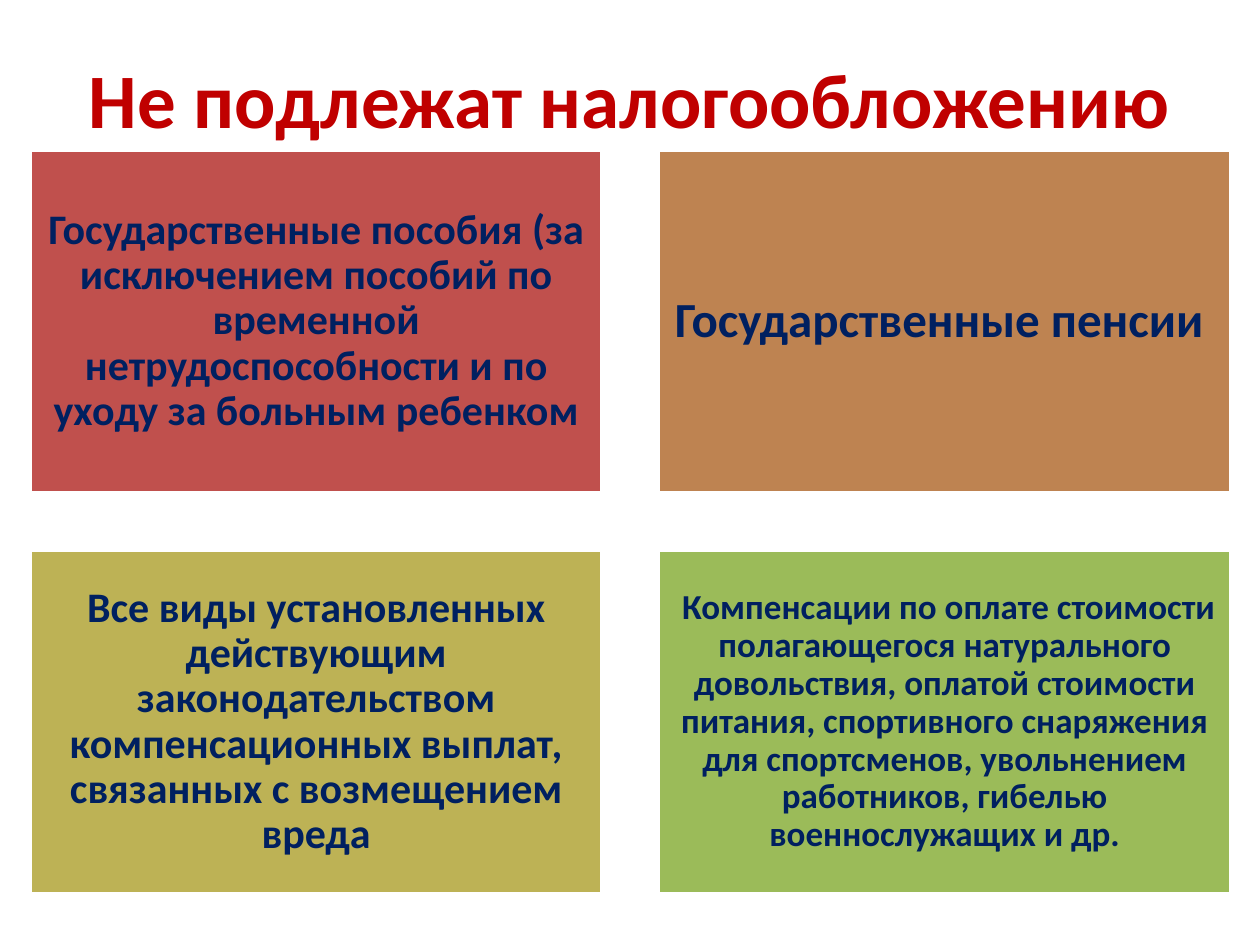
import pptx
import pptx.dml.color
import pptx.enum.shapes
import pptx.enum.text
import pptx.util
from pptx.util import Cm

TITLE = "Не подлежат налогообложению"
# Text, fill colour and font size of each card, row by row
CARDS = [
    ("Государственные пособия (за исключением пособий по временной "
     "нетрудоспособности и по уходу за больным ребенком", "C0504D", 24),
    ("Государственные пенсии ", "BE8351", 28),
    ("Все виды установленных действующим законодательством "
     "компенсационных выплат, связанных с возмещением вреда", "BDB255", 24),
    (" Компенсации по оплате стоимости полагающегося натурального "
     "довольствия, оплатой стоимости питания, спортивного снаряжения для "
     "спортсменов, увольнением работников, гибелью военнослужащих и др.",
     "9BBB59", 20),
]
COLUMNS = 2
LEFT, TOP = 0.61, 3.02
CARD_WIDTH, CARD_HEIGHT = 11.53, 6.91
COLUMN_STEP, ROW_STEP = 12.67, 8.08


def color(hex_string):
    return pptx.dml.color.RGBColor.from_string(hex_string)


class SlideBuilder:
    font_name = "Calibri"
    title_color = "C00000"
    text_color = "002060"
    line_color = "FFFFFF"

    def __init__(self, slide):
        self.slide = slide

    def set_text(self, shape, text, size, text_color, margin, line_spacing=1.0):
        """Put bold, centred text into the shape; margin is in centimetres."""
        frame = shape.text_frame
        frame.text = text
        frame.word_wrap = True
        frame.vertical_anchor = pptx.enum.text.MSO_ANCHOR.MIDDLE
        frame.margin_left = frame.margin_right = Cm(margin)
        frame.margin_top = frame.margin_bottom = Cm(margin)
        paragraph = frame.paragraphs[0]
        paragraph.alignment = pptx.enum.text.PP_ALIGN.CENTER
        paragraph.line_spacing = line_spacing
        font = paragraph.runs[0].font
        font.name = self.font_name
        font.size = pptx.util.Pt(size)
        font.bold = True
        font.color.rgb = color(text_color)

    def title(self, text):
        shape = self.slide.shapes.add_textbox(
            Cm(1.27), Cm(0.76), Cm(22.86), Cm(2.41))
        self.set_text(shape, text, 44, self.title_color, 0.25)

    def card(self, left, top, text, fill, size):
        shape = self.slide.shapes.add_shape(
            pptx.enum.shapes.MSO_SHAPE.RECTANGLE,
            Cm(left), Cm(top), Cm(CARD_WIDTH), Cm(CARD_HEIGHT))
        shape.shadow.inherit = False
        shape.fill.solid()
        shape.fill.fore_color.rgb = color(fill)
        shape.line.color.rgb = color(self.line_color)
        shape.line.width = pptx.util.Pt(2)
        # The margin grows with the font size
        self.set_text(shape, text, size, self.text_color, size / 95, 0.9)


def main():
    presentation = pptx.Presentation()
    presentation.slide_width = Cm(25.4)
    presentation.slide_height = Cm(19.05)
    builder = SlideBuilder(
        presentation.slides.add_slide(presentation.slide_layouts[6]))
    builder.title(TITLE)
    for index, (text, fill, size) in enumerate(CARDS):
        row, column = divmod(index, COLUMNS)
        builder.card(LEFT + column * COLUMN_STEP, TOP + row * ROW_STEP,
                     text, fill, size)
    presentation.save("out.pptx")


if __name__ == "__main__":
    main()
